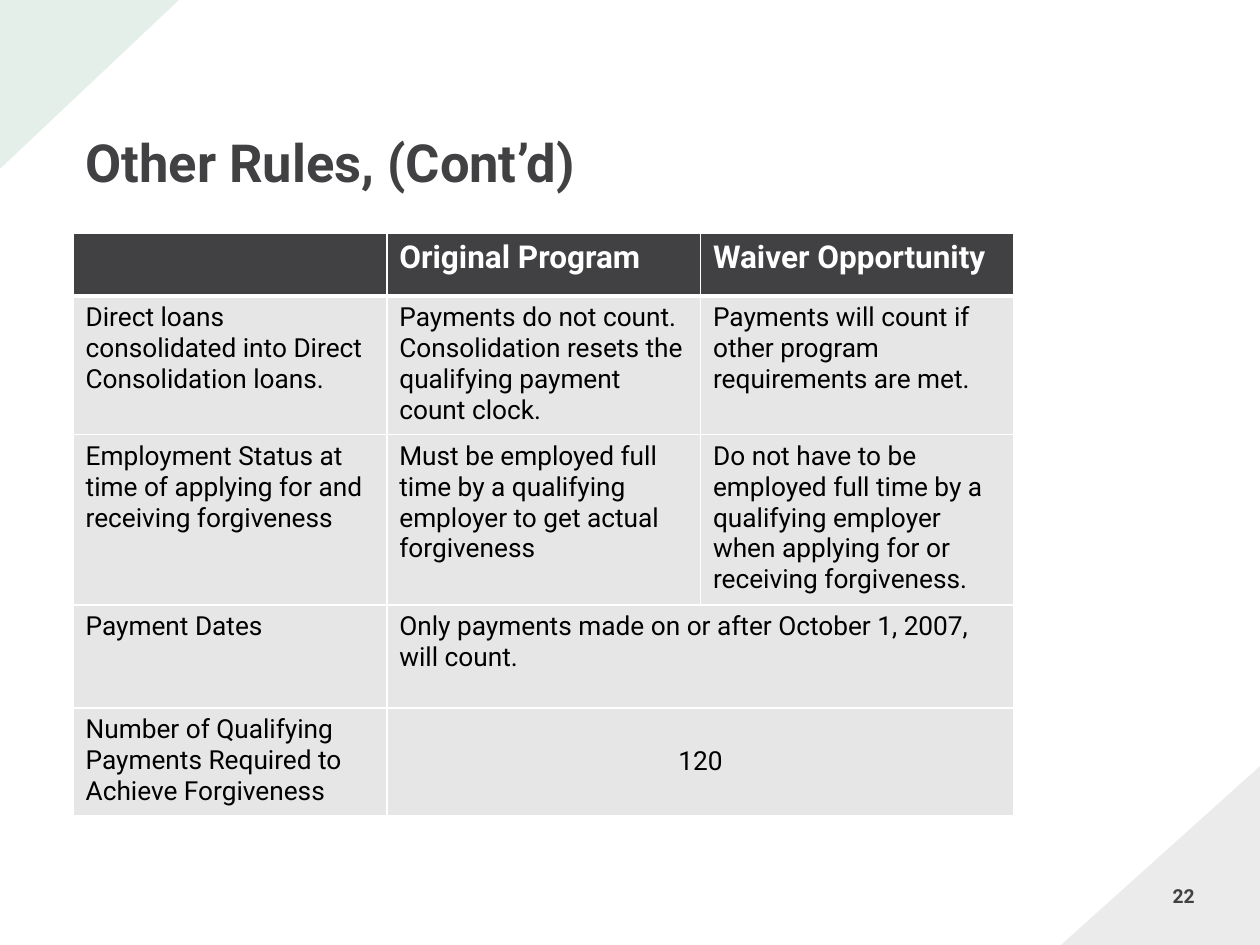
from lxml import etree
from pptx import Presentation, util as u
from pptx.dml.color import RGBColor
from pptx.enum import shapes, text
from pptx.oxml.ns import qn

DARK, GREEN, GREY, WHITE, BLACK = "414042", "056839", "E6E6E6", "FFFFFF", "000000"
FONT = "Roboto"
WIDE, HIGH = 10, 7.5
LEFT = 0.58
TITLE = "Other Rules, (Cont’d)"
PAGE = "22"
ROWS = [
    ("", "Original Program", "Waiver Opportunity"),
    ("Direct loans consolidated into Direct Consolidation loans.",
     "Payments do not count. Consolidation resets the qualifying payment count clock.",
     "Payments will count if other program requirements are met."),
    ("Employment Status at time of applying for and receiving forgiveness",
     "Must be employed full time by a qualifying employer to get actual forgiveness",
     "Do not have to be employed full time by a qualifying employer "
     "when applying for or receiving forgiveness."),
    ("Payment Dates", "Only payments made on or after October 1, 2007, will count."),
    ("Number of Qualifying Payments Required to Achieve Forgiveness", "120"),
]
TALL = [0.5, 1.08, 1.32, 0.82, 0.82]
COLS, COL = 3, 2.49
CORNERS = [
    (WIDE - 1.58, HIGH - 1.42, 1.58, 1.42, 270, DARK),
    (0, 0, 1.42, 1.34, 90, GREEN),
]


def rgb(code):
    return RGBColor.from_string(code)


def box(x, y, w, h):
    return [u.Inches(n) for n in (x, y, w, h)]


def style(para, size, color, bold=False):
    font = para.font
    font.name, font.size, font.bold = FONT, u.Pt(size), bold
    font.color.rgb = rgb(color)


def corner(x, y, w, h, turn, color):
    mid, cen = x + w / 2, y + h / 2
    tri = slide.shapes.add_shape(shapes.MSO_SHAPE.RIGHT_TRIANGLE,
                                 *box(mid - h / 2, cen - w / 2, h, w))
    tri.rotation = turn
    tri.shadow.inherit = False
    tri.fill.solid()
    tri.fill.fore_color.rgb = rgb(color)
    tri.line.fill.background()
    tint = tri.fill._xPr.find(".//" + qn("a:srgbClr"))
    etree.SubElement(tint, qn("a:alpha"), val="10000")


def label(words, area, size, anchor, align):
    frame = slide.shapes.add_textbox(*box(*area)).text_frame
    frame.word_wrap = True
    frame.vertical_anchor = anchor
    frame.text = words
    para = frame.paragraphs[0]
    para.alignment = align
    style(para, size, DARK, True)
    return para


def border(cell, head, under):
    props = cell._tc.get_or_add_tcPr()
    for n, side in enumerate(("lnL", "lnR", "lnT", "lnB")):
        thick = 3 if (head and side == "lnB") or (under and side == "lnT") else 1
        line = etree.Element(qn("a:" + side), w=str(u.Pt(thick)))
        fill = etree.SubElement(line, qn("a:solidFill"))
        etree.SubElement(fill, qn("a:srgbClr"), val=WHITE)
        props.insert(n, line)


deck = Presentation()
deck.slide_width, deck.slide_height = u.Inches(WIDE), u.Inches(HIGH)
slide = deck.slides.add_slide(deck.slide_layouts[6])

for item in CORNERS:
    corner(*item)

title = label(TITLE, (LEFT, 0.25, 8.83, 1.34), 30,
              text.MSO_ANCHOR.BOTTOM, text.PP_ALIGN.LEFT)
title.line_spacing = 0.9
label(PAGE, (7.33, 6.97, 2.25, 0.4), 11, text.MSO_ANCHOR.TOP, text.PP_ALIGN.RIGHT)

grid = slide.shapes.add_table(len(ROWS), COLS,
                              *box(LEFT, 1.85, COLS * COL, sum(TALL))).table
for col in grid.columns:
    col.width = u.Inches(COL)
for r, (row, tall) in enumerate(zip(ROWS, TALL)):
    grid.rows[r].height = u.Inches(tall)
    head = r == 0
    for c in range(COLS):
        cell = grid.cell(r, c)
        cell.fill.solid()
        cell.fill.fore_color.rgb = rgb(DARK if head else GREY)
        border(cell, head, r == 1)
        if c < len(row):
            cell.text = row[c]
            style(cell.text_frame.paragraphs[0], 18 if head else 15,
                  WHITE if head else BLACK, head)
    if len(row) < COLS:
        grid.cell(r, 1).merge(grid.cell(r, COLS - 1))

count = grid.cell(len(ROWS) - 1, 1)
count.vertical_anchor = text.MSO_ANCHOR.MIDDLE
count.text_frame.paragraphs[0].alignment = text.PP_ALIGN.CENTER

deck.save("out.pptx")
